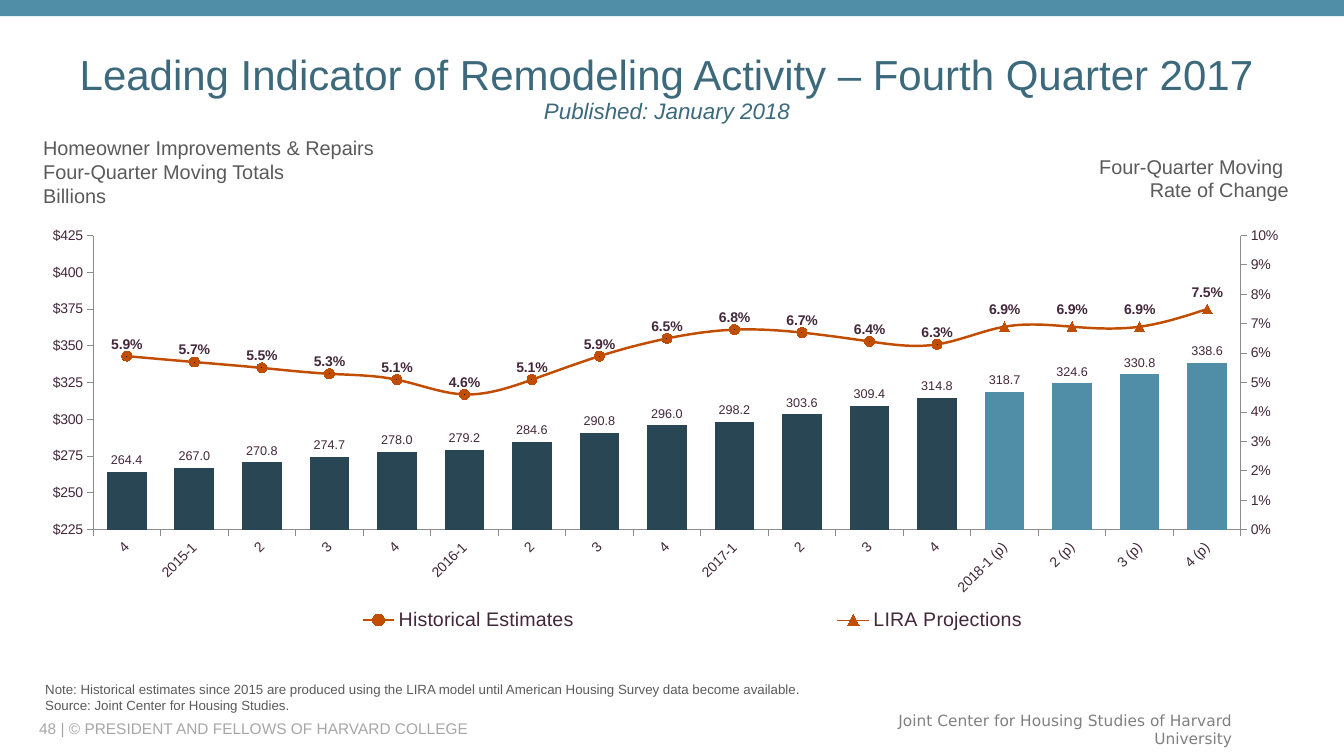
from copy import deepcopy

from pptx import Presentation
from pptx.chart.axis import CategoryAxis, ValueAxis
from pptx.chart.data import CategoryChartData
from pptx.dml.color import RGBColor
from pptx.enum.chart import XL_CHART_TYPE, XL_LABEL_POSITION, XL_LEGEND_POSITION, XL_MARKER_STYLE, XL_TICK_MARK
from pptx.enum.shapes import MSO_SHAPE
from pptx.enum.text import MSO_ANCHOR, PP_ALIGN
from pptx.oxml import parse_xml
from pptx.oxml.ns import nsdecls
from pptx.util import Inches, Pt

COLUMNS = XL_CHART_TYPE.COLUMN_CLUSTERED
ABOVE, OUTSIDE = XL_LABEL_POSITION.ABOVE, XL_LABEL_POSITION.OUTSIDE_END
BOTTOM = XL_LEGEND_POSITION.BOTTOM
CIRCLE, TRIANGLE, NO_MARKER = XL_MARKER_STYLE.CIRCLE, XL_MARKER_STYLE.TRIANGLE, XL_MARKER_STYLE.NONE
TICK_OUT = XL_TICK_MARK.OUTSIDE
RECTANGLE = MSO_SHAPE.RECTANGLE
TOP, MIDDLE = MSO_ANCHOR.TOP, MSO_ANCHOR.MIDDLE
LEFT, CENTER, RIGHT = PP_ALIGN.LEFT, PP_ALIGN.CENTER, PP_ALIGN.RIGHT

COLORS = {"band": "508DA6", "title": "3C6A7C", "caption": "5A5A5A", "copyright": "A6A6A6",
          "center": "808080", "chart_text": "43273A", "history": "284653",
          "projection": "508DA6", "rate": "C14D00", "axis": "8C8C8C"}

TITLE = "Leading Indicator of Remodeling Activity – Fourth Quarter 2017"
PUBLISHED = "Published: January 2018"
TEXTS = [
    ((0.29, 7.13, 7.92, 0.2), ["48 | © PRESIDENT AND FELLOWS OF HARVARD COLLEGE"],
     11, "Arial", "copyright", LEFT, MIDDLE),
    ((8.42, 7.09, 3.9, 0.29), ["Joint Center for Housing Studies of Harvard University"],
     11, "DejaVu Sans", "center", RIGHT, MIDDLE),
    ((0.33, 1.3, 4.94, 0.82),
     ["Homeowner Improvements & Repairs", "Four-Quarter Moving Totals", "Billions"],
     14.2, "Arial", "caption", LEFT, TOP),
    ((9.82, 1.48, 3.06, 0.58), ["Four-Quarter Moving ", "Rate of Change"],
     14.2, "Arial", "caption", RIGHT, TOP),
    ((0.35, 6.71, 11.39, 0.42),
     ["Note: Historical estimates since 2015 are produced using the LIRA model until "
      "American Housing Survey data become available.",
      "Source: Joint Center for Housing Studies."], 9.5, "Arial", "caption", LEFT, TOP),
]
QUARTERS = ["4", "2015-1", "2", "3", "4", "2016-1", "2", "3", "4", "2017-1", "2", "3", "4",
            "2018-1 (p)", "2 (p)", "3 (p)", "4 (p)"]
SPENDING = [264.4, 267.0, 270.8, 274.7, 278.0, 279.2, 284.6, 290.8, 296.0, 298.2, 303.6,
            309.4, 314.8, 318.7, 324.6, 330.8, 338.6]
RATES = [0.059, 0.057, 0.055, 0.053, 0.051, 0.046, 0.051, 0.059, 0.065, 0.068, 0.067,
         0.064, 0.063, 0.069, 0.069, 0.069, 0.075]
FIRST_PROJECTION = 13
HISTORY, PROJECTED = range(FIRST_PROJECTION), range(FIRST_PROJECTION, len(QUARTERS))
RATE_LINES = [("Historical Estimates", CIRCLE, 1.75, PROJECTED),
              ("LIRA Projections", TRIANGLE, 0.75, HISTORY)]
PLOT_AREA = (0.05, 0.04, 0.9, 0.7)
LEGEND_AREA = (0.06, 0.91, 0.92, 0.09)


def rgb(name):
    return RGBColor.from_string(COLORS[name])


def style_font(font, size, color, face="Arial"):
    font.size, font.name = Pt(size), face
    font.color.rgb = rgb(color)


def add_text(slide, box, lines, size, face, color, align, anchor):
    frame = slide.shapes.add_textbox(*map(Inches, box)).text_frame
    frame.word_wrap, frame.vertical_anchor = True, anchor
    frame.text = "\n".join(lines)
    for paragraph in frame.paragraphs:
        paragraph.alignment = align
        style_font(paragraph.font, size, color, face)
    return frame


def manual_layout(area, inner=False):
    target = '<c:layoutTarget val="inner"/>' if inner else ""
    places = "".join(f'<c:{key} val="{value}"/>' for key, value in zip("xywh", area))
    return parse_xml(f'<c:layout {nsdecls("c")}><c:manualLayout>{target}<c:xMode val="edge"/>'
                     f'<c:yMode val="edge"/>{places}</c:manualLayout></c:layout>')


def style_axis(axis):
    axis.has_major_gridlines = False
    axis.major_tick_mark = TICK_OUT
    axis.format.line.color.rgb = rgb("axis")
    axis.format.line.width = Pt(0.75)
    style_font(axis.tick_labels.font, 10, "chart_text")


def scale_axis(axis, low, high, step, number_format):
    axis.minimum_scale, axis.maximum_scale, axis.major_unit = low, high, step
    axis.tick_labels.number_format = number_format
    axis.tick_labels.number_format_is_linked = False


def add_labels(series, size, number_format, position, bold=False):
    labels = series.data_labels
    labels.show_value = True
    labels.number_format, labels.number_format_is_linked = number_format, False
    labels.position = position
    style_font(labels.font, size, "chart_text")
    labels.font.bold = bold


def move_rates_to_right_axis(chart):
    bars = chart.plots[0]._element
    left_value = chart.value_axis._element
    lines = parse_xml(f'<c:lineChart {nsdecls("c")}><c:grouping val="standard"/>'
                      '<c:varyColors val="0"/><c:marker val="1"/>'
                      '<c:axId val="5001"/><c:axId val="5002"/></c:lineChart>')
    for series in bars.xpath("c:ser")[1:]:
        for flag in series.xpath("c:invertIfNegative"):
            series.remove(flag)
        lines.xpath("c:marker")[0].addprevious(series)
    bars.addnext(lines)

    hidden = deepcopy(chart.category_axis._element)
    right = deepcopy(left_value)
    for axis, own, other in ((hidden, "5001", "5002"), (right, "5002", "5001")):
        axis.xpath("c:axId")[0].set("val", own)
        axis.xpath("c:crossAx")[0].set("val", other)
    right.xpath("c:axPos")[0].set("val", "r")
    right.xpath("c:crosses")[0].set("val", "max")
    left_value.addnext(right)
    right.addnext(hidden)
    CategoryAxis(hidden).visible = False
    scale_axis(ValueAxis(right), 0, 0.1, 0.01, "0%")


def add_remodeling_chart(slide):
    data = CategoryChartData()
    data.categories = QUARTERS
    data.add_series("Series 1", SPENDING, "#,##0.0")
    for name, *_ in RATE_LINES:
        data.add_series(name, RATES, "0.0%")
    box = map(Inches, (0.29, 2.17, 12.65, 4.17))
    chart = slide.shapes.add_chart(COLUMNS, *box, data).chart
    chart.has_title = False
    style_font(chart.font, 12, "chart_text")

    style_axis(chart.category_axis)
    chart.category_axis._element.xpath("c:txPr/a:bodyPr")[0].set("rot", "-2700000")
    style_axis(chart.value_axis)
    scale_axis(chart.value_axis, 225, 425, 25, '"$"#,##0')
    move_rates_to_right_axis(chart)

    bar_plot, line_plot = chart.plots
    bar_plot.gap_width, bar_plot.vary_by_categories = 70, False
    spending = bar_plot.series[0]
    spending.invert_if_negative = False
    spending.format.fill.solid()
    spending.format.fill.fore_color.rgb = rgb("history")
    for index in PROJECTED:
        fill = spending.points[index].format.fill
        fill.solid()
        fill.fore_color.rgb = rgb("projection")
    add_labels(spending, 9, "#,##0.0", OUTSIDE)

    for series, (_, marker, width, unmarked) in zip(line_plot.series, RATE_LINES):
        series.smooth = True
        series.format.line.color.rgb = rgb("rate")
        series.format.line.width = Pt(width)
        series.marker.style, series.marker.size = marker, 7
        series.marker.format.fill.solid()
        series.marker.format.fill.fore_color.rgb = rgb("rate")
        series.marker.format.line.color.rgb = rgb("rate")
        for index in unmarked:
            series.points[index].marker.style = NO_MARKER
    add_labels(line_plot.series[1], 10, "0.0%", ABOVE, bold=True)

    chart.has_legend = True
    legend = chart.legend
    legend.position, legend.include_in_layout = BOTTOM, False
    style_font(legend.font, 14, "chart_text")
    for old in legend._element.xpath("c:layout"):
        legend._element.remove(old)
    position = legend._element.xpath("c:legendPos")[0]
    position.addnext(manual_layout(LEGEND_AREA))
    position.addnext(parse_xml(f'<c:legendEntry {nsdecls("c")}><c:idx val="0"/>'
                               '<c:delete val="1"/></c:legendEntry>'))
    plot_area = bar_plot._element.getparent()
    for old in plot_area.xpath("c:layout"):
        plot_area.remove(old)
    plot_area.insert(0, manual_layout(PLOT_AREA, inner=True))


def main():
    """Build the remodeling activity slide."""
    deck = Presentation()
    deck.slide_width, deck.slide_height = Inches(13.33), Inches(7.5)
    slide = deck.slides.add_slide(deck.slide_layouts[6])

    band = slide.shapes.add_shape(RECTANGLE, 0, 0, deck.slide_width, Inches(0.16))
    band.shadow.inherit = False
    band.fill.solid()
    band.fill.fore_color.rgb = rgb("band")
    band.line.fill.background()

    heading = add_text(slide, (0.29, 0.4, 12.65, 0.97), [TITLE], 30, "Arial", "title",
                       CENTER, MIDDLE).paragraphs[0]
    heading.line_spacing = 0.9
    heading.add_line_break()
    published = heading.add_run()
    published.text = PUBLISHED
    published.font.size, published.font.italic = Pt(16), True

    add_remodeling_chart(slide)
    for text in TEXTS:
        add_text(slide, *text)
    deck.save("out.pptx")


if __name__ == "__main__":
    main()
